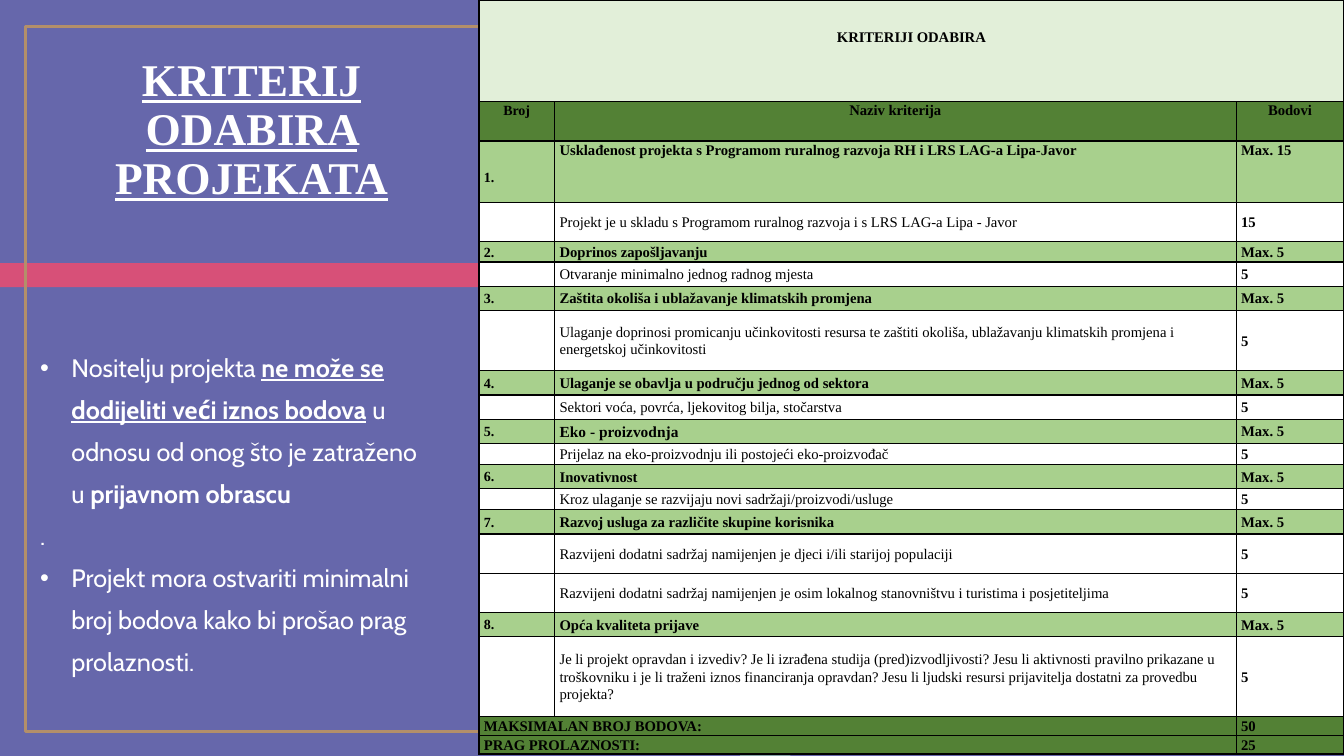
from typing import NamedTuple

from lxml.etree import SubElement
from pptx import Presentation
from pptx.dml.color import RGBColor
from pptx.enum.shapes import MSO_SHAPE
from pptx.enum.text import MSO_ANCHOR, PP_ALIGN
from pptx.oxml.ns import qn
from pptx.util import Inches, Pt

COLORS = {
    "back": "6667AB", "teal": "85A0A9", "pink": "D75078", "frame": "B38F6A",
    "pale": "E2EFD9", "dark": "538135", "green": "A8D08D",
    "white": "FFFFFF", "black": "000000",
}
SERIF = "Times New Roman"


class Bar(NamedTuple):
    left: float
    top: float
    width: float
    height: float
    fill: str | None = None
    line: str | None = None


class Row(NamedTuple):
    height: float
    num: str
    name: str
    points: str
    kind: str = "item"
    size: float = 10.5


class Bit(NamedTuple):
    text: str
    bold: bool = False
    under: bool = False


FILLS = {"title": "pale", "head": "dark", "group": "green", "item": "white", "total": "dark"}

BARS = [
    Bar(7.34, 1.81, 0.5, 5.69, fill="teal"),
    Bar(0, 2.61, 5.97, 0.24, fill="pink"),
    Bar(0.25, 0.26, 12.88, 7, line="frame"),
]

ROWS = [
    Row(1.01, "KRITERIJI ODABIRA", "", "", "title"),
    Row(0.39, "Broj", "Naziv kriterija", "Bodovi", "head"),
    Row(0.61, "1.", "Usklađenost projekta s Programom ruralnog razvoja RH i LRS LAG-a Lipa-Javor",
        "Max. 15", "group"),
    Row(0.39, "", "Projekt je u skladu s Programom ruralnog razvoja i s LRS LAG-a Lipa - Javor", "15"),
    Row(0.2, "2.", "Doprinos zapošljavanju", "Max. 5", "group"),
    Row(0.24, "", "Otvaranje minimalno jednog radnog mjesta", "5"),
    Row(0.24, "3.", "Zaštita okoliša i ublažavanje klimatskih promjena", "Max. 5", "group"),
    Row(0.6, "", "Ulaganje doprinosi promicanju učinkovitosti resursa te zaštiti okoliša, "
        "ublažavanju klimatskih promjena i energetskoj učinkovitosti", "5"),
    Row(0.24, "4.", "Ulaganje se obavlja u području jednog od sektora", "Max. 5", "group"),
    Row(0.24, "", "Sektori voća, povrća, ljekovitog bilja, stočarstva", "5"),
    Row(0.24, "5.", "Eko - proizvodnja", "Max. 5", "group", 11),
    Row(0.21, "", "Prijelaz na eko-proizvodnju ili postojeći eko-proizvođač", "5"),
    Row(0.24, "6.", "Inovativnost", "Max. 5", "group"),
    Row(0.21, "", "Kroz ulaganje se razvijaju novi sadržaji/proizvodi/usluge", "5"),
    Row(0.24, "7.", "Razvoj usluga za različite skupine korisnika", "Max. 5", "group"),
    Row(0.39, "", "Razvijeni dodatni sadržaj namijenjen je djeci i/ili starijoj populaciji", "5"),
    Row(0.39, "", "Razvijeni dodatni sadržaj namijenjen je osim lokalnog stanovništvu "
        "i turistima i posjetiteljima", "5"),
    Row(0.24, "8.", "Opća kvaliteta prijave", "Max. 5", "group"),
    Row(0.79, "", "Je li projekt opravdan i izvediv? Je li izrađena studija (pred)izvodljivosti? "
        "Jesu li aktivnosti pravilno prikazane u troškovniku i je li traženi iznos financiranja "
        "opravdan? Jesu li ljudski resursi prijavitelja dostatni za provedbu projekta?", "5"),
    Row(0.17, "MAKSIMALAN BROJ BODOVA:", "", "50", "total"),
    Row(0.17, "PRAG PROLAZNOSTI:", "", "25", "total"),
]
COLS = [0.75, 6.76, 1.07]

NOTES = [
    [Bit("Nositelju projekta "), Bit("ne može se dodijeliti veći iznos bodova", True, True),
     Bit(" u odnosu od onog što je zatraženo u "), Bit("prijavnom obrascu", True)],
    [Bit(".")],
    [Bit("Projekt mora ostvariti minimalni broj bodova kako bi prošao prag prolaznosti.")],
]


def tint(name: str) -> RGBColor:
    return RGBColor.from_string(COLORS[name])


def set_font(font, face: str, size: float, color: str, bold: bool | None = None) -> None:
    font.name, font.size, font.bold = face, Pt(size), bold
    font.color.rgb = tint(color)


def add_bar(slide, bar: Bar) -> None:
    shape = slide.shapes.add_shape(MSO_SHAPE.RECTANGLE, *map(Inches, bar[:4]))
    shape.shadow.inherit = False
    if bar.fill:
        shape.fill.solid()
        shape.fill.fore_color.rgb = tint(bar.fill)
    else:
        shape.fill.background()
    if bar.line:
        shape.line.color.rgb = tint(bar.line)
        shape.line.width = Pt(2)
    else:
        shape.line.fill.background()


def add_box(slide, left: float, top: float, width: float, height: float):
    box = slide.shapes.add_textbox(*map(Inches, (left, top, width, height)))
    box.text_frame.word_wrap = True
    return box.text_frame


def add_title(slide) -> None:
    frame = add_box(slide, 0.37, 0.71, 4.25, 1.72)
    frame.vertical_anchor = MSO_ANCHOR.MIDDLE
    frame.margin_bottom = Inches(0.6)
    para = frame.paragraphs[0]
    para.text = "KRITERIJ ODABIRA PROJEKATA"
    para.alignment, para.line_spacing = PP_ALIGN.CENTER, 0.9
    set_font(para.font, SERIF, 32.4, "white", True)
    para.font.underline = True


def add_notes(slide) -> None:
    frame = add_box(slide, 0.3, 3.33, 4.12, 3.14)
    for i, bits in enumerate(NOTES):
        para = frame.add_paragraph() if i else frame.paragraphs[0]
        para.line_spacing = Pt(30)
        set_font(para.font, "Cabin", 18, "white")
        for bit in bits:
            run = para.add_run()
            run.text = bit.text
            run.font.bold, run.font.underline = bit.bold, bit.under
        if bits[0].text != ".":
            add_mark(para)


def add_mark(para) -> None:
    props = para._p.get_or_add_pPr()
    props.set("marL", str(Inches(0.31)))
    props.set("indent", str(-Inches(0.31)))
    for tag, key, value in (("buFont", "typeface", "Arial"), ("buChar", "char", "•")):
        mark = props.makeelement(qn(f"a:{tag}"), {key: value})
        props.insert_element_before(mark, "a:tabLst", "a:defRPr", "a:extLst")


def add_edges(cell) -> None:
    props = cell._tc.get_or_add_tcPr()
    for i, side in enumerate(("lnL", "lnR", "lnT", "lnB")):
        edge = props.makeelement(qn(f"a:{side}"), {"w": str(Pt(1))})
        fill = SubElement(edge, qn("a:solidFill"))
        SubElement(fill, qn("a:srgbClr"), val=COLORS["black"])
        props.insert(i, edge)


def fill_cell(cell, row: Row, col: int) -> None:
    cell.fill.solid()
    cell.fill.fore_color.rgb = tint(FILLS[row.kind])
    add_edges(cell)
    cell.margin_left = cell.margin_right = Inches(0.05)
    cell.margin_top = cell.margin_bottom = 0
    upper = row.kind in ("title", "head") or row.num == "1."
    cell.vertical_anchor = MSO_ANCHOR.TOP if upper else MSO_ANCHOR.MIDDLE
    if row.kind == "title" or (row.num == "1." and col == 0):
        cell.margin_top = Inches(0.28)
    para = cell.text_frame.paragraphs[0]
    para.text = (row.num, row.name, row.points)[col]
    para.line_spacing = 1.07
    if row.kind in ("title", "head"):
        para.alignment = PP_ALIGN.CENTER
    small = col == 0 and row.kind in ("head", "group", "item")
    size = 10 if small else row.size if col == 1 else 10.5
    set_font(para.font, SERIF, size, "black", row.kind != "item" or col == 2)


def add_grid(slide) -> None:
    frame = slide.shapes.add_table(len(ROWS), len(COLS), Inches(4.75), 0,
                                   Inches(sum(COLS)), Inches(sum(r.height for r in ROWS)))
    table = frame.table
    table.first_row = table.horz_banding = False
    for col, width in zip(table.columns, COLS):
        col.width = Inches(width)
    for i, row in enumerate(ROWS):
        table.rows[i].height = Inches(row.height)
        for j in range(len(COLS)):
            fill_cell(table.cell(i, j), row, j)
        if row.kind in ("title", "total"):
            table.cell(i, 0).merge(table.cell(i, 2 if row.kind == "title" else 1))


def main() -> None:
    deck = Presentation()
    deck.slide_width, deck.slide_height = Inches(13.33), Inches(7.5)
    slide = deck.slides.add_slide(deck.slide_layouts[6])
    slide.background.fill.solid()
    slide.background.fill.fore_color.rgb = tint("back")
    # Backdrop
    for bar in BARS:
        add_bar(slide, bar)
    # Left panel
    add_title(slide)
    add_notes(slide)
    # Criteria table
    add_grid(slide)
    deck.save("out.pptx")


if __name__ == "__main__":
    main()
